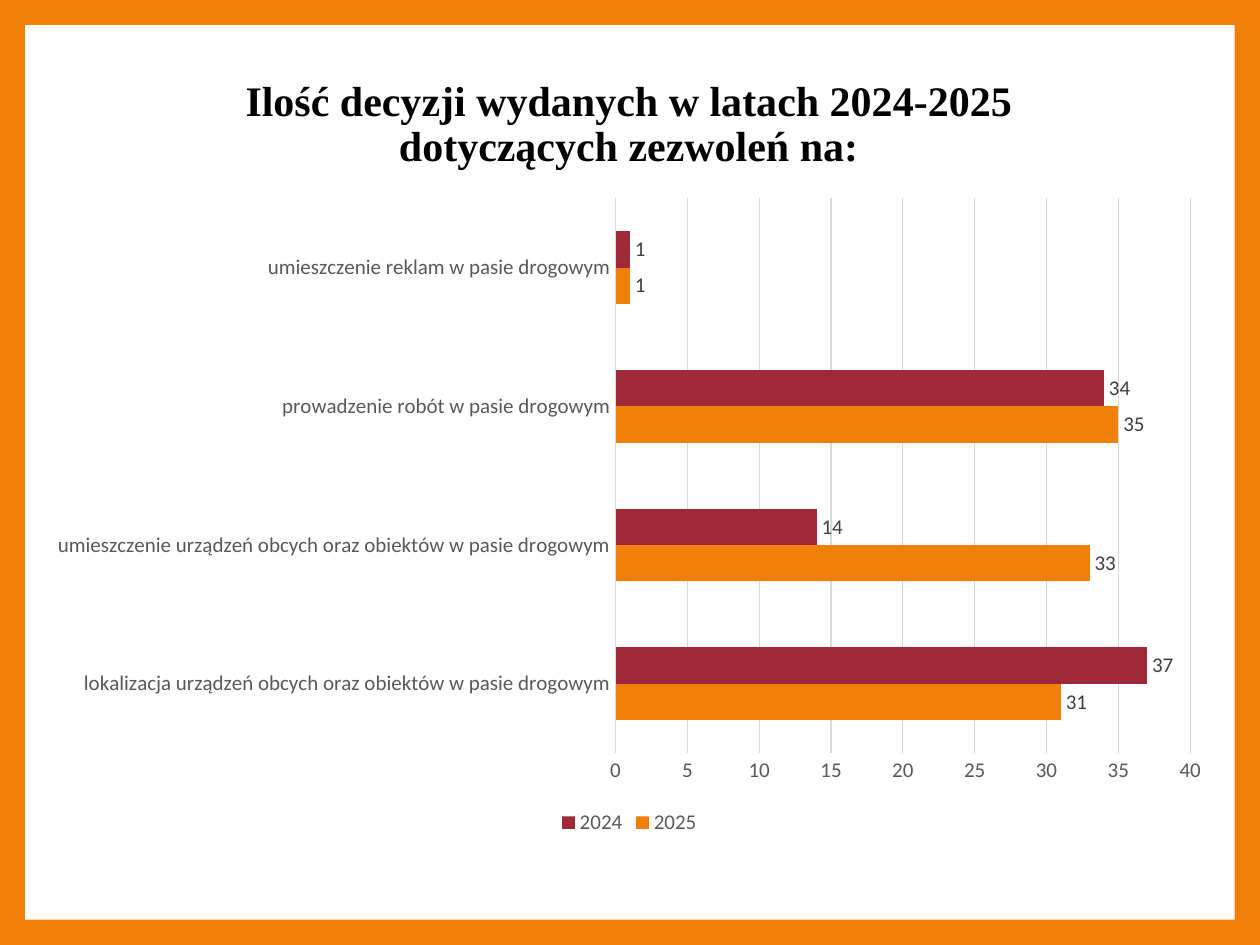
from dataclasses import dataclass

from pptx import Presentation
from pptx import util as u
from pptx.chart.data import CategoryChartData
from pptx.dml.color import RGBColor
from pptx.enum import chart as ch, shapes, text

WIDTH, HEIGHT = 10, 7.5
ORANGE, RED, GRID, GREY = "F07F09", "9F2936", "D9D9D9", "595959"


@dataclass
class Year:
    name: str
    values: tuple
    color: str


CATEGORIES = (
    "lokalizacja urządzeń obcych oraz obiektów w pasie drogowym",
    "umieszczenie urządzeń obcych oraz obiektów w pasie drogowym",
    "prowadzenie robót w pasie drogowym",
    "umieszczenie reklam w pasie drogowym",
)
YEARS = (
    Year("2025", (31, 33, 35, 1), ORANGE),
    Year("2024", (37, 14, 34, 1), RED),
)


def paint(fill, color: str) -> None:
    fill.solid()
    fill.fore_color.rgb = RGBColor.from_string(color)


def style(font, size: float, color: str, name: str = "Calibri", bold: bool = False) -> None:
    font.size, font.name, font.bold = u.Pt(size), name, bold
    font.color.rgb = RGBColor.from_string(color)


def area(left: float, top: float, width: float, height: float) -> tuple:
    """Turn shares of the slide into lengths."""
    return (u.Inches(left * WIDTH), u.Inches(top * HEIGHT),
            u.Inches(width * WIDTH), u.Inches(height * HEIGHT))


def add_panel(page) -> None:
    margin = 0.2
    x, y = margin / WIDTH, margin / HEIGHT
    panel = page.shapes.add_shape(shapes.MSO_SHAPE.RECTANGLE, *area(x, y, 1 - 2 * x, 1 - 2 * y))
    panel.shadow.inherit = False
    paint(panel.fill, "FFFFFF")
    panel.line.fill.background()


def add_title(page, wording: str) -> None:
    box = page.shapes.add_textbox(*area(0.094, 0.09, 0.81, 0.085))
    frame = box.text_frame
    frame.word_wrap = True
    frame.vertical_anchor = text.MSO_ANCHOR.MIDDLE
    frame.text = wording
    para = frame.paragraphs[0]
    para.alignment = text.PP_ALIGN.CENTER
    para.line_spacing = 0.9
    style(para.runs[0].font, 24, "000000", "Times New Roman", True)


def add_decision_chart(page) -> None:
    data = CategoryChartData()
    data.categories = CATEGORIES
    for year in YEARS:
        data.add_series(year.name, year.values)
    chart = page.shapes.add_chart(ch.XL_CHART_TYPE.BAR_CLUSTERED,
                                  *area(0.027, 0.196, 0.945, 0.693), data).chart
    style(chart.font, 10, "000000")
    chart.has_title = False

    # Legend
    chart.has_legend = True
    chart.legend.position = ch.XL_LEGEND_POSITION.BOTTOM
    chart.legend.include_in_layout = False
    style(chart.legend.font, 12, GREY)

    # Axes
    for axis in (chart.category_axis, chart.value_axis):
        axis.major_tick_mark = axis.minor_tick_mark = ch.XL_TICK_MARK.NONE
        style(axis.tick_labels.font, 12, GREY)
    chart.value_axis.format.line.fill.background()
    chart.value_axis.has_major_gridlines = True
    for line in (chart.category_axis.format.line,
                 chart.value_axis.major_gridlines.format.line):
        paint(line.fill, GRID)
        line.width = u.Pt(0.75)

    # Bars and their values
    plot = chart.plots[0]
    plot.gap_width = 182
    plot.vary_by_categories = False
    for year, series in zip(YEARS, plot.series):
        paint(series.format.fill, year.color)
        labels = series.data_labels
        labels.show_value = True
        labels.position = ch.XL_LABEL_POSITION.OUTSIDE_END
        style(labels.font, 12, "404040")


def main() -> None:
    deck = Presentation()
    deck.slide_width, deck.slide_height = u.Inches(WIDTH), u.Inches(HEIGHT)
    page = deck.slides.add_slide(deck.slide_layouts[6])
    paint(page.background.fill, ORANGE)
    add_panel(page)
    add_title(page, "Ilość decyzji wydanych w latach 2024-2025 dotyczących zezwoleń na:")
    add_decision_chart(page)
    deck.save("out.pptx")


if __name__ == "__main__":
    main()
